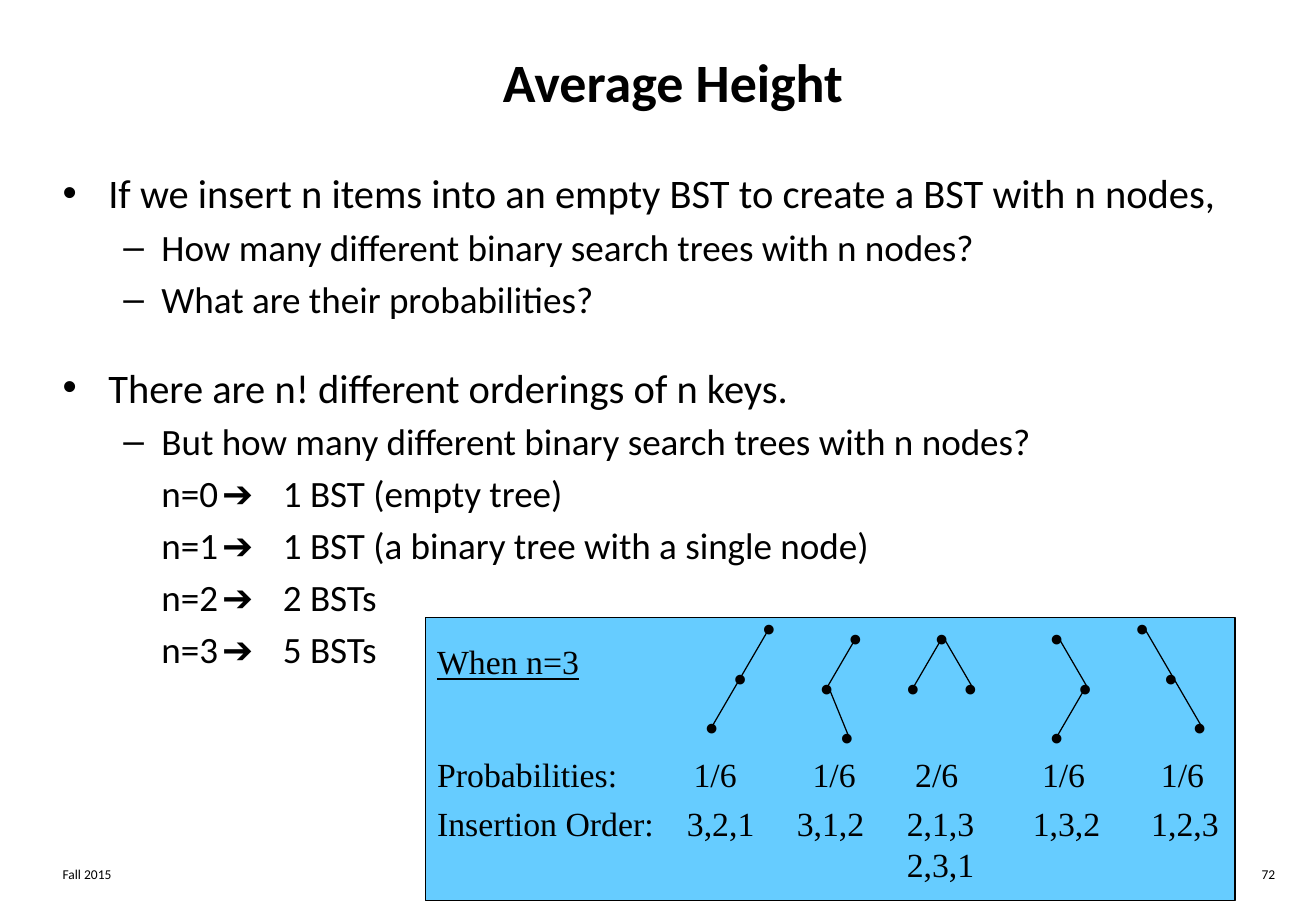
from dataclasses import dataclass

from lxml import etree
from pptx import Presentation
from pptx.dml.color import RGBColor
from pptx.enum.shapes import MSO_CONNECTOR as Connector, MSO_SHAPE as Shape
from pptx.enum.text import MSO_ANCHOR as Anchor, MSO_AUTO_SIZE as AutoSize, PP_ALIGN as Align
from pptx.oxml.ns import qn
from pptx.util import Pt

BLACK, PANEL_BLUE = "000000", "66CCFF"
SANS, SERIF = "Calibri", "Times New Roman"
STEP_X, STEP_Y = 17, 29.2      # distance between neighbouring tree nodes
DOT_X, DOT_Y = 12, 17.3        # node centre within the box of its dot
PANEL_LEFT, INSET = 252, 7.2


@dataclass(frozen=True)
class Item:
    text: str
    level: int = 1
    tabbed: bool = False
    gap: float | None = None


@dataclass(frozen=True)
class Tree:
    root_x: float
    root_y: float
    nodes: tuple[tuple[float, int], ...]   # steps from the root; the root is first
    edges: tuple[tuple[int, int], ...]
    probability: str
    probability_x: float
    orders: tuple[str, ...]
    order_x: float

    def position(self, node: int) -> tuple[float, float]:
        across, down = self.nodes[node]
        return self.root_x + across * STEP_X, self.root_y + down * STEP_Y


CHAIN = ((0, 1), (1, 2))
FORK = ((0, 1), (0, 2))

TREES = [
    Tree(456.5, 371.5, ((0, 0), (-1, 1), (-2, 2)), CHAIN, "1/6", 424, ("3,2,1",), 427.3),
    Tree(507.8, 377.3, ((0, 0), (-1, 1), (-0.3, 2)), CHAIN, "1/6", 494.5, ("3,1,2",), 492.4),
    Tree(558.9, 377.3, ((0, 0), (-1, 1), (1, 1)), FORK, "2/6", 555.3, ("2,1,3", "2,3,1"), 557.6),
    Tree(627, 377.3, ((0, 0), (1, 1), (0, 2)), CHAIN, "1/6", 630.5, ("1,3,2",), 632.3),
    Tree(677.8, 371.5, ((0, 0), (1, 1), (2, 2)), CHAIN, "1/6", 701, ("1,2,3",), 702.5),
]

ITEMS = [
    Item("If we insert n items into an empty BST to create a BST with n nodes,", 0),
    Item("How many different binary search trees with n nodes?"),
    Item("What are their probabilities?"),
    Item("There are n! different orderings of n keys.", 0, gap=25),
    Item("But how many different binary search trees with n nodes?"),
    Item("n=0\t➔\t1 BST (empty tree)", tabbed=True),
    Item("n=1\t➔\t1 BST (a binary tree with a single node)", tabbed=True),
    Item("n=2\t➔\t2 BSTs", tabbed=True),
    Item("n=3\t➔\t5 BSTs", tabbed=True),
]


def color(hex_value: str) -> RGBColor:
    return RGBColor.from_string(hex_value)


def place(shape, left: float, top: float, width: float, height: float) -> None:
    shape.left, shape.top, shape.width, shape.height = map(Pt, (left, top, width, height))


def set_font(paragraph, name: str, size: float, bold=None, underline=None) -> None:
    font = paragraph.font
    font.name, font.size, font.bold, font.underline = name, Pt(size), bold, underline
    font.color.rgb = color(BLACK)


def set_tabs(paragraph, stops: list[float], align: str) -> None:
    properties = paragraph._p.get_or_add_pPr()
    tab_list = etree.Element(qn("a:tabLst"))
    for stop in stops:
        etree.SubElement(tab_list, qn("a:tab"), pos=str(int(Pt(stop))), algn=align)
    defaults = properties.find(qn("a:defRPr"))
    if defaults is None:
        properties.append(tab_list)
    else:
        defaults.addprevious(tab_list)


def add_text(slide, lines: list[str], left: float, top: float, width: float, height: float,
             name: str, size: float, align=Align.LEFT, underline=None, wrap=True):
    box = slide.shapes.add_textbox(Pt(left), Pt(top), Pt(width), Pt(height))
    frame = box.text_frame
    frame.word_wrap = wrap
    for index, line in enumerate(lines):
        paragraph = frame.paragraphs[0] if index == 0 else frame.add_paragraph()
        paragraph.text = line
        paragraph.alignment = align
        set_font(paragraph, name, size, underline=underline)
    return frame.paragraphs


def add_row(slide, lines: list[str], centers: list[float], top: float, height: float) -> None:
    """Write a label followed by values centred on the given columns."""
    stops = [center - PANEL_LEFT - INSET for center in centers]
    paragraphs = add_text(slide, lines, PANEL_LEFT, top, 480, height, SERIF, 20)
    for paragraph in paragraphs:
        set_tabs(paragraph, stops, "ctr")
    # A continuation line starts at the column of the fork
    for paragraph in paragraphs[1:]:
        properties = paragraph._p.pPr
        properties.remove(properties.find(qn("a:tabLst")))
        set_tabs(paragraph, stops[2:3], "ctr")


def draw_tree(slide, tree: Tree) -> None:
    for parent, child in tree.edges:
        ends = tree.position(parent) + tree.position(child)
        edge = slide.shapes.add_connector(Connector.STRAIGHT, *map(Pt, ends))
        edge.line.color.rgb = color(BLACK)
        edge.line.width = Pt(0.75)
        etree.SubElement(edge._element.spPr, qn("a:effectLst"))
    for node in range(len(tree.nodes)):
        x, y = tree.position(node)
        add_text(slide, ["•"], x - DOT_X, y - DOT_Y, 25, 36, SERIF, 24, wrap=False)


def fill_body(body) -> None:
    place(body, 30, 96, 732, 354)
    frame = body.text_frame
    frame.auto_size = AutoSize.NONE
    for index, item in enumerate(ITEMS):
        paragraph = frame.paragraphs[0] if index == 0 else frame.add_paragraph()
        paragraph.text = item.text
        paragraph.level = item.level
        if item.gap is not None:
            paragraph.space_before = Pt(item.gap)
        if item.tabbed:
            properties = paragraph._p.get_or_add_pPr()
            properties.set("marL", str(int(Pt(58.5))))
            properties.set("indent", "0")
            etree.SubElement(properties, qn("a:buNone"))
            set_tabs(paragraph, [102, 131], "l")
        set_font(paragraph, SANS, 22 if item.level else 24)


def main() -> None:
    presentation = Presentation()
    presentation.slide_width, presentation.slide_height = Pt(780), Pt(540)
    slide = presentation.slides.add_slide(presentation.slide_layouts[1])

    # Title and list
    title, body = slide.placeholders
    place(title, 30, 12, 738, 72)
    title.text_frame.text = "Average Height"
    title.text_frame.vertical_anchor = Anchor.MIDDLE
    set_font(title.text_frame.paragraphs[0], SANS, 32, bold=True)
    fill_body(body)

    # Footer
    add_text(slide, ["Fall 2015"], 30, 510, 163, 18, SANS, 8)
    add_text(slide, ["72"], 600, 510, 163, 18, SANS, 8, Align.RIGHT)

    # Panel with the five trees
    panel = slide.shapes.add_shape(Shape.RECTANGLE, Pt(PANEL_LEFT), Pt(366), Pt(480), Pt(168))
    panel.shadow.inherit = False
    panel.fill.solid()
    panel.fill.fore_color.rgb = color(PANEL_BLUE)
    panel.line.color.rgb = color(BLACK)
    panel.line.width = Pt(0.75)
    for tree in TREES:
        draw_tree(slide, tree)

    # Labels and values under the trees
    add_text(slide, ["When n=3"], PANEL_LEFT, 376.5, 99, 32, SERIF, 20, underline=True)
    probabilities = "\t".join(["Probabilities:"] + [tree.probability for tree in TREES])
    add_row(slide, [probabilities], [tree.probability_x for tree in TREES], 443, 32)
    first_orders = "\t".join(["Insertion Order:"] + [tree.orders[0] for tree in TREES])
    more_orders = ["\t" + order for tree in TREES for order in tree.orders[1:]]
    add_row(slide, [first_orders] + more_orders, [tree.order_x for tree in TREES], 472.5, 55)

    presentation.save("out.pptx")


if __name__ == "__main__":
    main()
